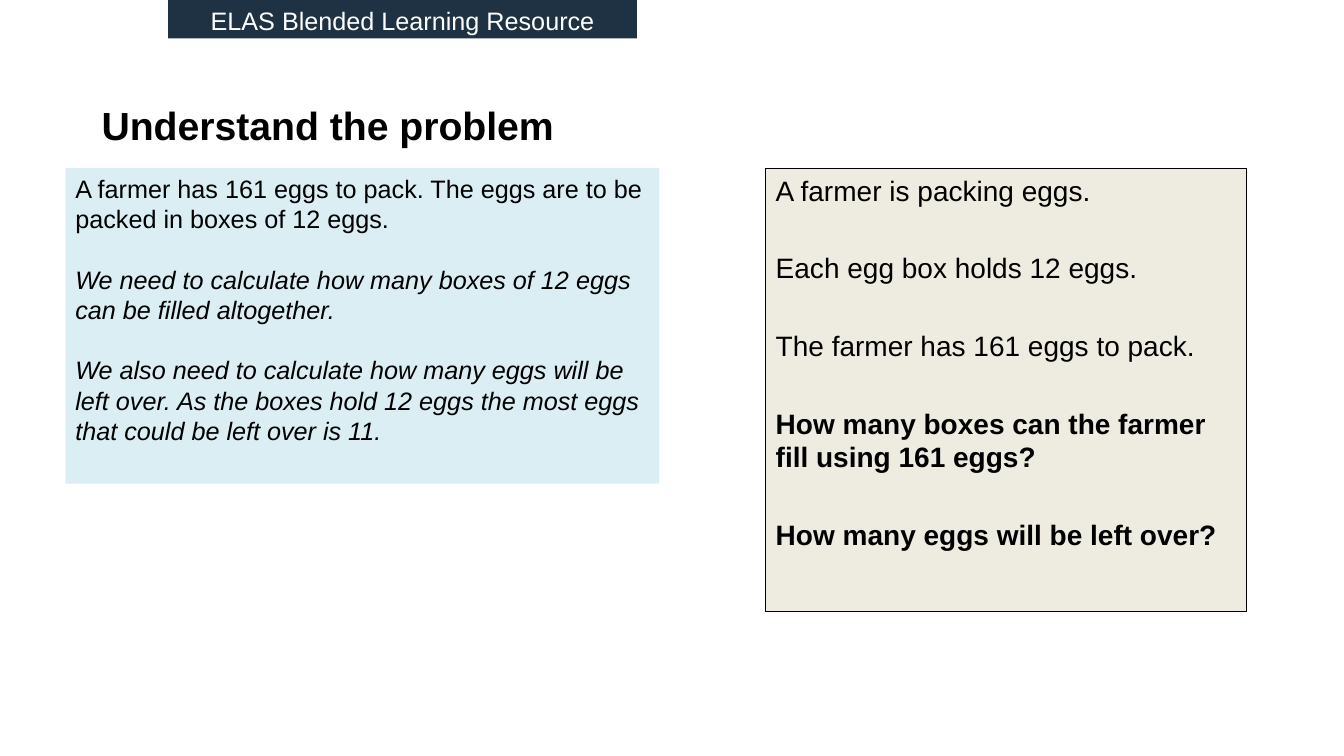
from dataclasses import dataclass

from pptx import Presentation
from pptx.dml.color import RGBColor
from pptx.enum import shapes, text
from pptx.slide import Slide
from pptx.util import Cm, Pt


@dataclass(frozen=True)
class Theme:
    font: str = "Arial"
    black: str = "000000"
    white: str = "FFFFFF"
    navy: str = "1F3244"
    pale_blue: str = "DBEEF4"
    cream: str = "EEECE1"
    title_size: float = 28
    problem_size: float = 20
    body_size: float = 18
    outline: float = 0.75


THEME = Theme()


@dataclass(frozen=True)
class Line:
    wording: str
    bold: bool = False
    italic: bool = False


@dataclass(frozen=True)
class Panel:
    left: float
    top: float
    width: float
    height: float
    lines: tuple[Line, ...]
    size: float
    color: str = THEME.black
    fill: str | None = None
    outline: str | None = None
    gap: float = 0
    align: text.PP_ALIGN = text.PP_ALIGN.LEFT
    anchor: text.MSO_ANCHOR = text.MSO_ANCHOR.TOP


PANELS = (
    Panel(2.31, 2.34, 22.86, 1.63, (Line("Understand the problem", bold=True),),
          THEME.title_size, anchor=text.MSO_ANCHOR.MIDDLE),
    Panel(1.65, 4.24, 14.96, 7.95, (
        Line("A farmer has 161 eggs to pack. The eggs are to be packed in boxes of 12 eggs."),
        Line("We need to calculate how many boxes of 12 eggs can be filled altogether.", italic=True),
        Line("We also need to calculate how many eggs will be left over. "
             "As the boxes hold 12 eggs the most eggs that could be left over is 11.", italic=True),
    ), THEME.body_size, fill=THEME.pale_blue, gap=21.6),
    Panel(4.24, 0, 11.81, 0.97, (Line("ELAS Blended Learning Resource"),),
          THEME.body_size, THEME.white, THEME.navy, align=text.PP_ALIGN.CENTER),
    Panel(19.3, 4.24, 12.12, 11.18, (
        Line("A farmer is packing eggs."),
        Line("Each egg box holds 12 eggs."),
        Line("The farmer has 161 eggs to pack."),
        Line("How many boxes can the farmer fill using 161 eggs?", bold=True),
        Line("How many eggs will be left over?", bold=True),
    ), THEME.problem_size, fill=THEME.cream, outline=THEME.black, gap=31.5),
)


def draw_panel(slide: Slide, panel: Panel) -> None:
    """Draw one panel with its paragraphs evenly spaced."""
    box = tuple(map(Cm, (panel.left, panel.top, panel.width, panel.height)))
    if panel.fill is None:
        shape = slide.shapes.add_textbox(*box)
    else:
        shape = slide.shapes.add_shape(shapes.MSO_SHAPE.RECTANGLE, *box)
        shape.shadow.inherit = False
        shape.fill.solid()
        shape.fill.fore_color.rgb = RGBColor.from_string(panel.fill)
        if panel.outline is None:
            shape.line.fill.background()
        else:
            shape.line.color.rgb = RGBColor.from_string(panel.outline)
            shape.line.width = Pt(THEME.outline)
    frame = shape.text_frame
    frame.word_wrap = True
    frame.vertical_anchor = panel.anchor
    for index, line in enumerate(panel.lines):
        paragraph = frame.add_paragraph() if index else frame.paragraphs[0]
        paragraph.text = line.wording
        paragraph.alignment = panel.align
        if index:
            paragraph.space_before = Pt(panel.gap)
        font = paragraph.font
        font.name = THEME.font
        font.size = Pt(panel.size)
        font.bold = line.bold
        font.italic = line.italic
        font.color.rgb = RGBColor.from_string(panel.color)


def main() -> None:
    """Build the egg-packing slide and save it."""
    presentation = Presentation()
    presentation.slide_width = Cm(33.87)
    presentation.slide_height = Cm(19.05)
    slide = presentation.slides.add_slide(presentation.slide_layouts[6])
    for panel in PANELS:
        draw_panel(slide, panel)
    presentation.save("out.pptx")


if __name__ == "__main__":
    main()
